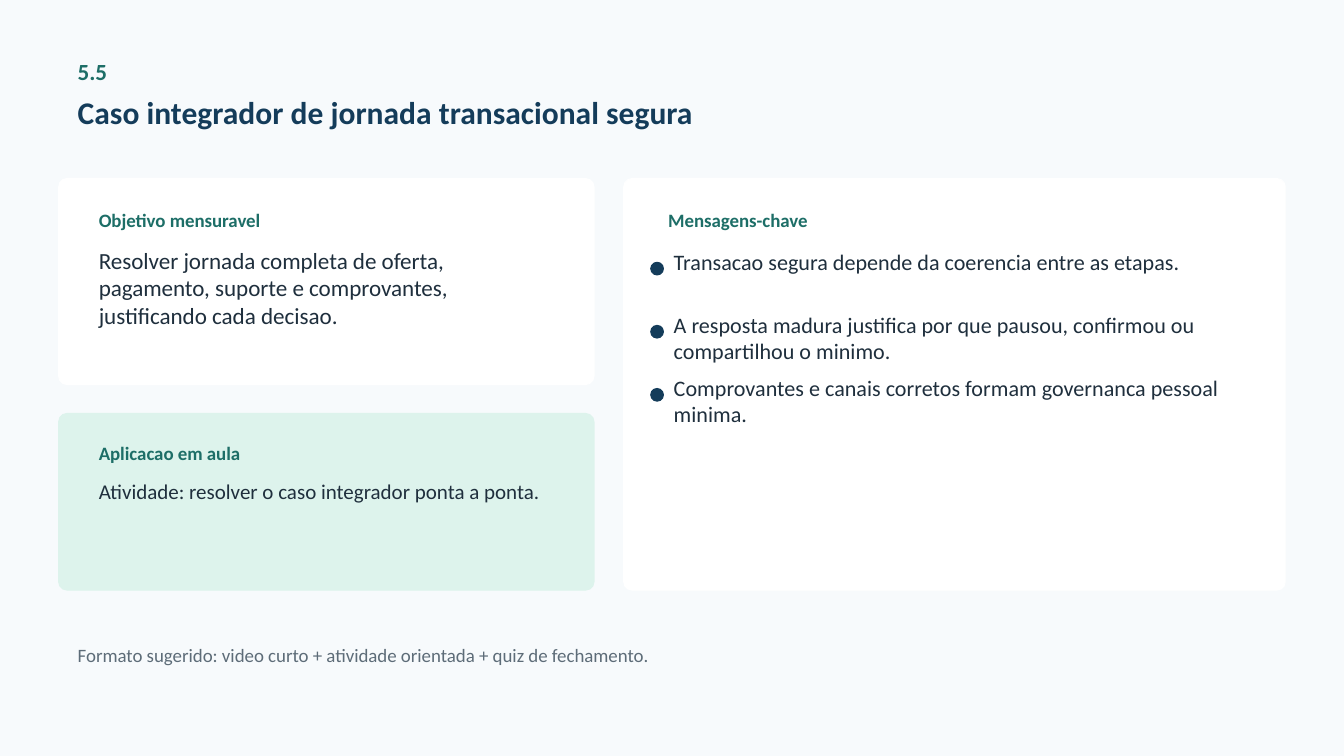
from pptx import Presentation
from pptx.dml.color import RGBColor
from pptx.enum.shapes import MSO_SHAPE as Shape
from pptx.enum.text import MSO_ANCHOR as Anchor
from pptx.util import Cm, Pt

NAVY, TEAL, INK, GREY = "143C5A", "1D6E67", "1F2F3D", "5D6C78"
WHITE, MINT, PALE = "FFFFFF", "DDF3EC", "F7FAFC"


def color(hex_code):
    return RGBColor.from_string(hex_code)


class LessonSlide:
    font = "Calibri"
    corner = 0.21
    padding = (0.48, 0.38)

    def __init__(self, deck, background):
        self.slide = deck.slides.add_slide(deck.slide_layouts[6])
        self.slide.background.fill.solid()
        self.slide.background.fill.fore_color.rgb = color(background)

    def solid(self, kind, box, fill):
        shape = self.slide.shapes.add_shape(kind, *map(Cm, box))
        shape.shadow.inherit = False
        shape.fill.solid()
        shape.fill.fore_color.rgb = color(fill)
        shape.line.color.rgb = color(fill)
        shape.line.width = Pt(0)
        return shape

    def card(self, box, fill):
        card = self.solid(Shape.ROUNDED_RECTANGLE, box, fill)
        card.adjustments[0] = self.corner / min(box[2:])

    def text(self, words, box, size, ink=INK, bold=False, padding=padding):
        frame = self.slide.shapes.add_textbox(*map(Cm, box)).text_frame
        frame.word_wrap = True
        frame.vertical_anchor = Anchor.TOP
        frame.margin_left = frame.margin_right = Cm(padding[0])
        frame.margin_top = frame.margin_bottom = Cm(padding[1])
        run = frame.paragraphs[0].add_run()
        run.text = words
        run.font.name = self.font
        run.font.size = Pt(size)
        run.font.bold = bold
        run.font.color.rgb = color(ink)

    def heading(self, words, box):
        self.text(words, box, 13.5, ink=TEAL, bold=True)

    def messages(self, items, left, top, pitch):
        for index, message in enumerate(items):
            y = top + index * pitch
            self.solid(Shape.OVAL, (left, y + 0.36, 0.32, 0.32), NAVY)
            self.text(message, (left + 0.58, y, 14.5, 1.38), 15.8, padding=(0, 0))


def main():
    deck = Presentation()
    deck.slide_width, deck.slide_height = Cm(33.87), Cm(19.05)
    lesson = LessonSlide(deck, PALE)

    # Section number and title
    lesson.text("5.5", (1.48, 1.11, 2.39, 1.06), 16.5, ink=TEAL, bold=True)
    lesson.text("Caso integrador de jornada transacional segura",
                (1.48, 1.96, 20.9, 2.22), 22.5, ink=NAVY, bold=True)

    # Objective
    lesson.card((1.48, 4.5, 13.49, 5.19), WHITE)
    lesson.heading("Objetivo mensuravel", (2.01, 4.97, 5.82, 0.9))
    lesson.text("Resolver jornada completa de oferta, pagamento, suporte e "
                "comprovantes, justificando cada decisao.",
                (2.01, 5.82, 12.12, 3.18), 16.5)

    # Key messages
    lesson.card((15.72, 4.5, 16.67, 10.37), WHITE)
    lesson.heading("Mensagens-chave", (16.36, 4.97, 6.35, 0.9))
    lesson.messages([
        "Transacao segura depende da coerencia entre as etapas.",
        "A resposta madura justifica por que pausou, confirmou ou "
        "compartilhou o minimo.",
        "Comprovantes e canais corretos formam governanca pessoal minima.",
    ], left=16.4, top=6.25, pitch=1.59)

    # Classroom application
    lesson.card((1.48, 10.42, 13.49, 4.45), MINT)
    lesson.heading("Aplicacao em aula", (2.01, 10.85, 5.29, 0.8))
    lesson.text("Atividade: resolver o caso integrador ponta a ponta.",
                (2.01, 11.73, 12.12, 2.48), 15)

    # Suggested format
    lesson.text("Formato sugerido: video curto + atividade orientada + "
                "quiz de fechamento.", (1.48, 15.93, 31.22, 1.11), 13.5, ink=GREY)

    deck.save("out.pptx")


if __name__ == "__main__":
    main()
